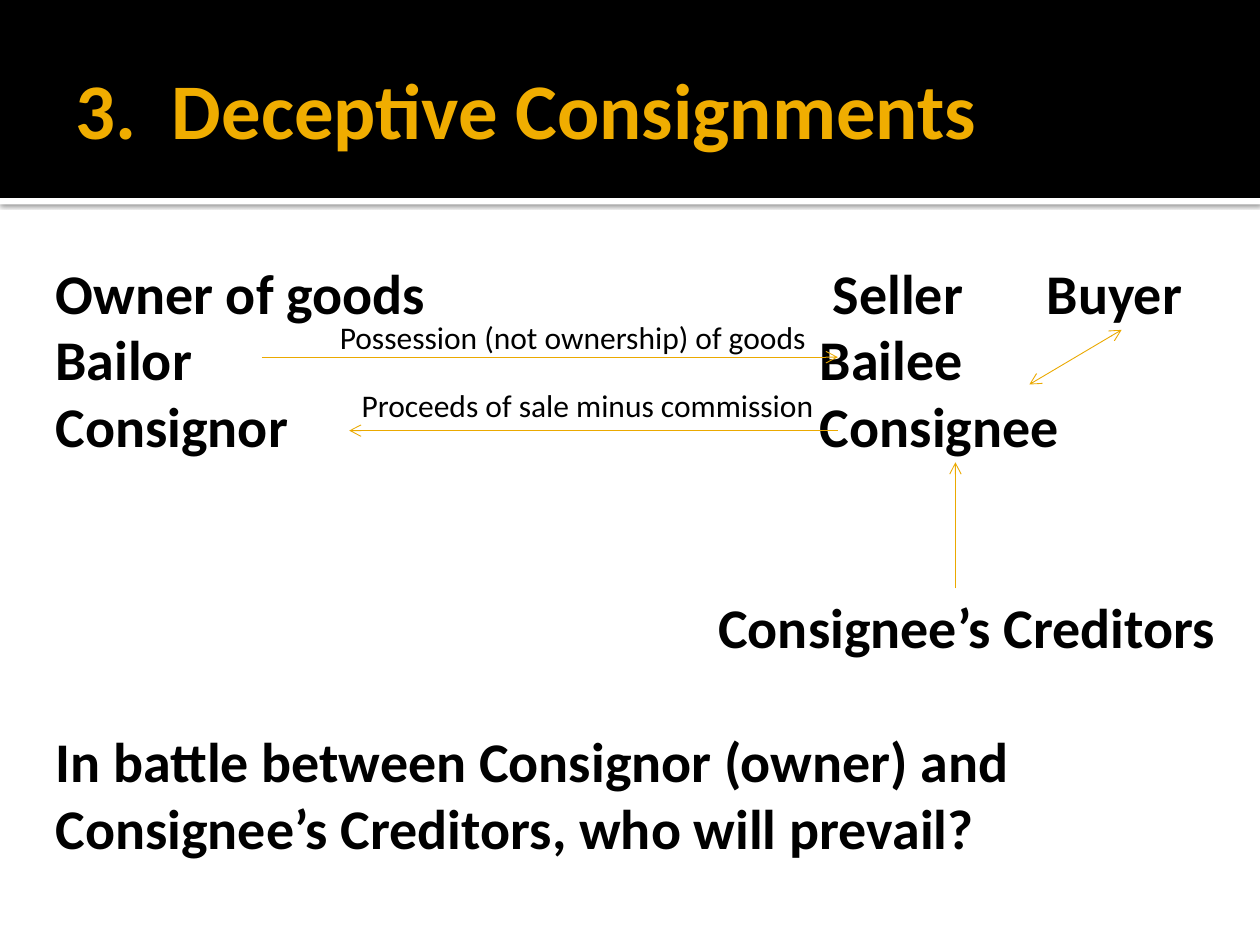
from dataclasses import dataclass

import pptx
import pptx.dml.color
import pptx.enum.shapes
import pptx.enum.text
import pptx.oxml
import pptx.oxml.ns
import pptx.util

Cm = pptx.util.Cm
Pt = pptx.util.Pt
Box = tuple[float, float, float, float]
NS = pptx.oxml.ns.nsdecls("a")
ANCHOR = pptx.enum.text.MSO_ANCHOR


@dataclass(frozen=True)
class Theme:
    font: str = "Calibri"
    black: str = "000000"
    white: str = "FFFFFF"
    gold: str = "F0AD00"
    rule: str = "EBA900"
    head: float = 45
    body: float = 32
    note: float = 18
    thin: float = 0.5


@dataclass(frozen=True)
class Line:
    text: str
    left: float = 0


@dataclass(frozen=True)
class Block:
    left: float
    row: int
    width: float
    lines: tuple[Line, ...]


@dataclass(frozen=True)
class Arrow:
    start: tuple[float, float]
    end: tuple[float, float]
    both: bool = False


@dataclass(frozen=True)
class Note:
    text: str
    box: Box


THEME = Theme()
TOP = 5.26  # top of the first body row
PITCH = 1.35  # from one body row to the next

BLOCKS = (
    Block(1.12, 0, 8, (Line("Owner of goods"), Line("Bailor"),
                       Line("Consignor"))),
    Block(16.53, 0, 4.95, (Line("Seller", 0.26), Line("Bailee"),
                           Line("Consignee"))),
    Block(21.1, 0, 3.2, (Line("Buyer"),)),
    Block(14.48, 5, 10.4, (Line("Consignee’s Creditors"),)),
    Block(1.12, 7, 23, (Line("In battle between Consignor (owner) and"),
                        Line("Consignee’s Creditors, who will prevail?"))),
)
ARROWS = (
    Arrow((5.28, 7.2), (16.89, 7.2)),
    Arrow((16.89, 8.68), (7.04, 8.68)),
    Arrow((19.26, 11.86), (19.26, 9.32)),
    Arrow((20.75, 7.75), (22.61, 6.65), both=True),
)
NOTES = (
    Note("Possession (not ownership) of goods", (6.6, 6.29, 10.08, 1.02)),
    Note("Proceeds of sale minus commission", (7.04, 7.65, 9.86, 1.02)),
)


def tint(code: str) -> pptx.dml.color.RGBColor:
    return pptx.dml.color.RGBColor.from_string(code)


def apply(item, form: dict) -> None:
    for name, value in form.items():
        setattr(item, name, value)


def add_bar(slide, box: Box, fill: str):
    bar = slide.shapes.add_shape(
        pptx.enum.shapes.MSO_SHAPE.RECTANGLE, *map(Cm, box))
    bar.shadow.inherit = False
    bar.fill.solid()
    bar.fill.fore_color.rgb = tint(fill)
    bar.line.fill.background()
    return bar


def add_shade(bar) -> None:
    glow = bar._element.spPr.find(pptx.oxml.ns.qn("a:effectLst"))
    glow.append(pptx.oxml.parse_xml(
        f'<a:outerShdw {NS} blurRad="{Pt(2.5)}" dist="{Pt(0.8)}" '
        f'dir="5400000" rotWithShape="0"><a:srgbClr val="{THEME.black}">'
        '<a:alpha val="60000"/></a:srgbClr></a:outerShdw>'))


def add_text(slide, box: Box, lines: tuple[Line, ...], font: dict,
             frame: dict, para: dict) -> None:
    text = slide.shapes.add_textbox(*map(Cm, box)).text_frame
    apply(text, frame)
    for count, line in enumerate(lines):
        part = text.add_paragraph() if count else text.paragraphs[0]
        apply(part, para)
        if line.left:
            part._p.get_or_add_pPr().set("marL", str(Cm(line.left)))
        run = part.add_run()
        run.text = line.text
        form = dict(font)
        run.font.color.rgb = tint(form.pop("tint"))
        apply(run.font, {"name": THEME.font, **form})


def add_block(slide, block: Block) -> None:
    box = (block.left, TOP + PITCH * block.row,
           block.width, PITCH * len(block.lines))
    add_text(slide, box, block.lines,
             {"size": Pt(THEME.body), "bold": True, "tint": THEME.black},
             {"word_wrap": True, "vertical_anchor": ANCHOR.TOP,
              "margin_left": 0, "margin_top": 0,
              "margin_right": 0, "margin_bottom": 0},
             {"line_spacing": 0.99})


def add_arrow(slide, arrow: Arrow) -> None:
    link = slide.shapes.add_connector(
        pptx.enum.shapes.MSO_CONNECTOR.STRAIGHT,
        *map(Cm, arrow.start + arrow.end))
    link.line.color.rgb = tint(THEME.rule)
    link.line.width = Pt(THEME.thin)
    ends = ("headEnd", "tailEnd") if arrow.both else ("tailEnd",)
    for end in ends:
        link.line._get_or_add_ln().append(
            pptx.oxml.parse_xml(f'<a:{end} {NS} type="arrow"/>'))
    link._element.spPr.append(pptx.oxml.parse_xml(f"<a:effectLst {NS}/>"))


def main() -> None:
    deck = pptx.Presentation()
    apply(deck, {"slide_width": Cm(25.4), "slide_height": Cm(19.05)})
    slide = deck.slides.add_slide(deck.slide_layouts[6])
    slide.background.fill.solid()
    slide.background.fill.fore_color.rgb = tint(THEME.white)

    # Title band with its shaded lower edge
    add_shade(add_bar(slide, (0, 3.99, 25.4, 0.13), THEME.white))
    add_bar(slide, (0, 0, 25.4, 3.99), THEME.black)
    add_text(slide, (1.27, 0.43, 22.86, 3.48),
             (Line("3.  Deceptive Consignments"),),
             {"size": Pt(THEME.head), "bold": True, "tint": THEME.gold},
             {"word_wrap": True, "vertical_anchor": ANCHOR.MIDDLE,
              "margin_right": Cm(0.13)}, {})

    # Parties and the question
    for block in BLOCKS:
        add_block(slide, block)

    # Flows between the parties
    for arrow in ARROWS:
        add_arrow(slide, arrow)
    for note in NOTES:
        add_text(slide, note.box, (Line(note.text),),
                 {"size": Pt(THEME.note), "tint": THEME.black},
                 {"word_wrap": False}, {})

    deck.save("out.pptx")


if __name__ == "__main__":
    main()
